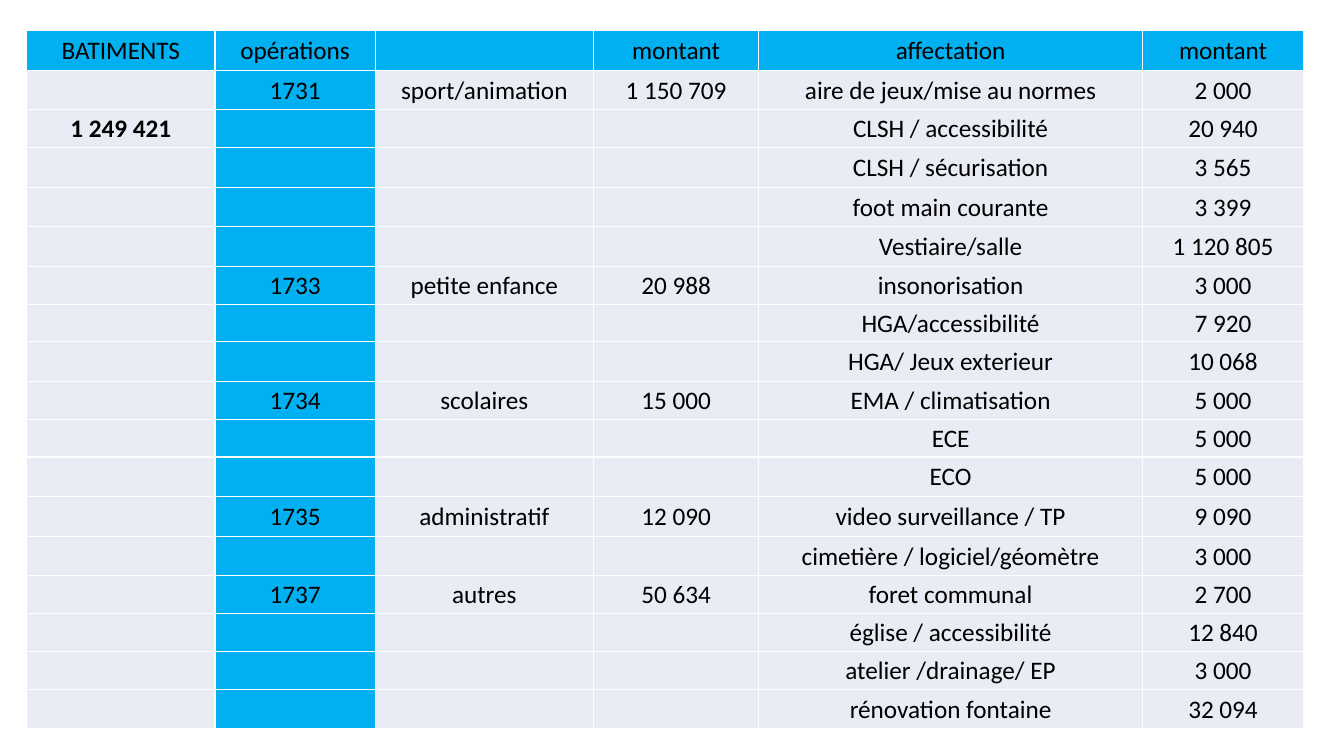
"""Build the slide listing building operations and their amounts."""
import pptx
import pptx.dml.color
import pptx.enum.text
import pptx.oxml
import pptx.oxml.ns
import pptx.util

Pt = pptx.util.Pt
BLUE = pptx.dml.color.RGBColor(0x00, 0xB0, 0xF0)
PALE = pptx.dml.color.RGBColor(0xE9, 0xEB, 0xF5)
BLACK = pptx.dml.color.RGBColor(0x00, 0x00, 0x00)
WHITE = pptx.dml.color.RGBColor(0xFF, 0xFF, 0xFF)

TOTAL = "1 249 421"
HEADINGS = ("BATIMENTS", "opérations", "", "montant", "affectation", "montant")
OPERATIONS = [
    ("1731", "sport/animation", "1 150 709", [
        ("aire de jeux/mise au normes", "2 000"),
        ("CLSH / accessibilité", "20 940"),
        ("CLSH / sécurisation", "3 565"),
        ("foot main courante", "3 399"),
        ("Vestiaire/salle", "1 120 805"),
    ]),
    ("1733", "petite enfance", "20 988", [
        ("insonorisation", "3 000"),
        ("HGA/accessibilité", "7 920"),
        ("HGA/ Jeux exterieur", "10 068"),
    ]),
    ("1734", "scolaires", "15 000", [
        ("EMA / climatisation", "5 000"),
        ("ECE", "5 000"),
        ("ECO", "5 000"),
    ]),
    ("1735", "administratif", "12 090", [
        ("video surveillance / TP", "9 090"),
        ("cimetière / logiciel/géomètre", "3 000"),
    ]),
    ("1737", "autres", "50 634", [
        ("foret communal", "2 700"),
        ("église / accessibilité", "12 840"),
        ("atelier /drainage/ EP", "3 000"),
        ("rénovation fontaine", "32 094"),
    ]),
]
COLUMN_WIDTHS = (134.6, 114.4, 156, 118, 274.2, 115)
TALL_ROWS = {0, 1, 3, 4, 5, 8, 11, 12, 13, 17}
TALL, SHORT = 28.3, 27

lines = [HEADINGS]
for number, sector, amount, allocations in OPERATIONS:
    for position, allocation in enumerate(allocations):
        operation = (number, sector, amount) if position == 0 else ("", "", "")
        total = TOTAL if len(lines) == 2 else ""
        lines.append((total, *operation, *allocation))
heights = [TALL if row in TALL_ROWS else SHORT for row in range(len(lines))]

deck = pptx.Presentation()
deck.slide_width, deck.slide_height = Pt(960), Pt(540)
slide = deck.slides.add_slide(deck.slide_layouts[6])
budget = slide.shapes.add_table(
    len(lines), len(HEADINGS), Pt(19), Pt(21.8),
    Pt(sum(COLUMN_WIDTHS)), Pt(sum(heights))).table
budget.horz_banding = False
for column, width in zip(budget.columns, COLUMN_WIDTHS):
    column.width = Pt(width)

for row, (line, height) in enumerate(zip(lines, heights)):
    budget.rows[row].height = Pt(height)
    for column, wording in enumerate(line):
        cell = budget.cell(row, column)
        cell.margin_left = cell.margin_right = cell.margin_top = Pt(0.7)
        cell.margin_bottom = 0
        cell.vertical_anchor = pptx.enum.text.MSO_ANCHOR.MIDDLE
        properties = cell._tc.get_or_add_tcPr()
        for side in ("lnL", "lnR", "lnT", "lnB"):
            properties.append(pptx.oxml.parse_xml(
                f'<a:{side} {pptx.oxml.ns.nsdecls("a")} w="{Pt(1)}"><a:solidFill>'
                f'<a:srgbClr val="{WHITE}"/></a:solidFill></a:{side}>'))
        cell.fill.solid()
        cell.fill.fore_color.rgb = BLUE if row == 0 or column == 1 else PALE
        if wording:
            paragraph = cell.text_frame.paragraphs[0]
            paragraph.alignment = pptx.enum.text.PP_ALIGN.CENTER
            run = paragraph.add_run()
            run.text = wording
            run.font.name = "Calibri"
            run.font.size = Pt(18)
            run.font.bold = wording == TOTAL
            run.font.color.rgb = BLACK

deck.save("out.pptx")
